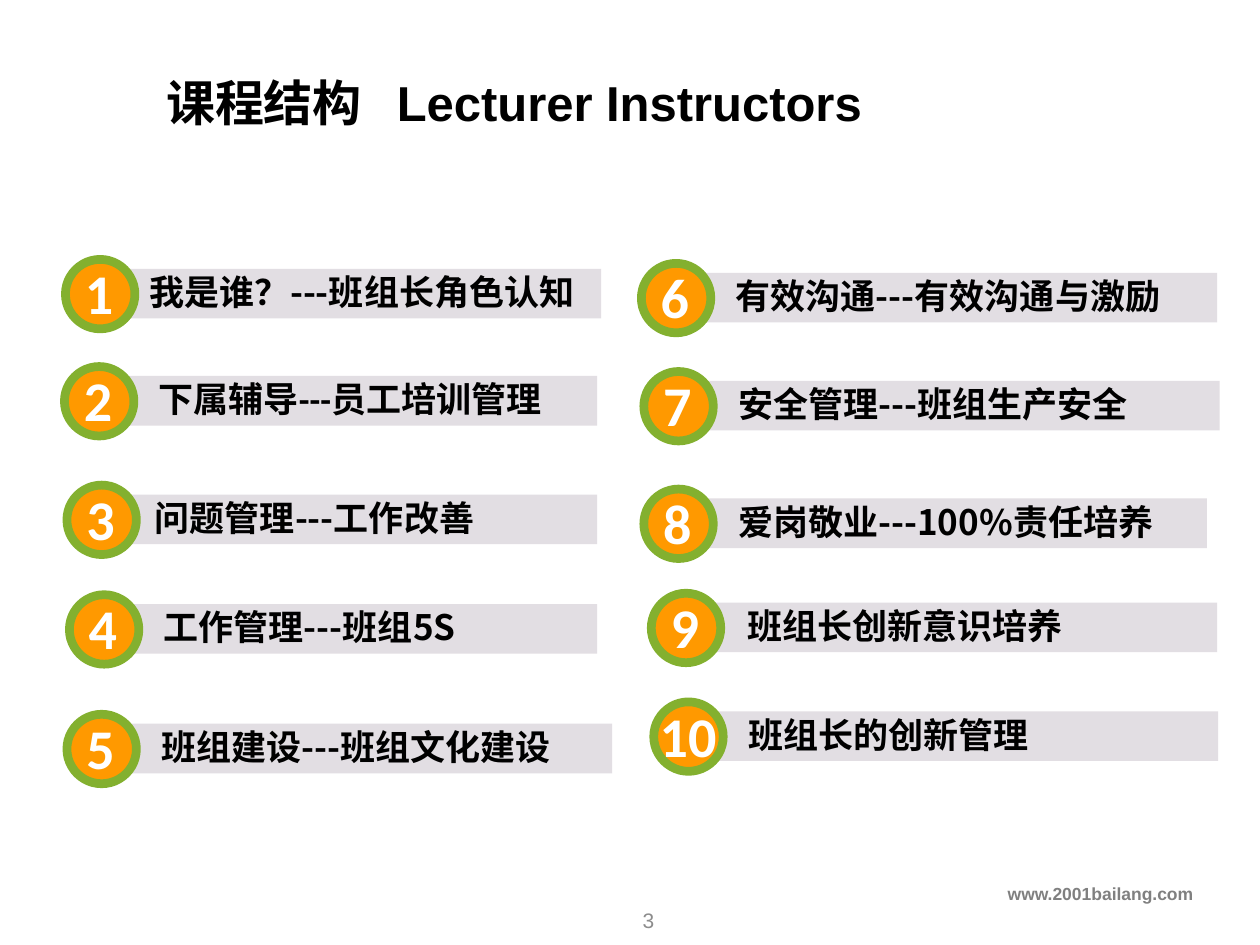
"""Build the course structure slide: ten numbered topics in two columns."""
from dataclasses import dataclass

from lxml import etree
from pptx import Presentation
from pptx.dml.color import RGBColor as Rgb
from pptx.enum import shapes, text
from pptx.oxml import ns
from pptx.util import Cm, Pt


@dataclass(frozen=True)
class Theme:
    black: str = "000000"
    white: str = "FFFFFF"
    grey: str = "808080"
    pale: str = "8C8C8C"
    bar: str = "E2DEE3"
    disc: str = "FF9900"
    ring: str = "83B02F"
    head: int = 28
    digit: int = 32
    topic: int = 20
    page: int = 12
    site: int = 10
    han: str = "Noto Sans CJK SC"
    latin: str = "Arial"
    round: str = "Calibri"


look = Theme()
deck = Presentation()
deck.slide_width, deck.slide_height = Cm(25.4), Cm(19.05)
slide = deck.slides.add_slide(deck.slide_layouts[6])


def write(words, area, size, color, face, bold=True, align=text.PP_ALIGN.LEFT,
          anchor=text.MSO_ANCHOR.TOP):
    frame = slide.shapes.add_textbox(*map(Cm, area)).text_frame
    frame.word_wrap = True
    frame.vertical_anchor = anchor
    frame.text = words
    line = frame.paragraphs[0]
    line.alignment = align
    for run in line.runs:
        font = run.font
        font.size, font.bold, font.name = Pt(size), bold, face
        font.color.rgb = Rgb.from_string(color)
        east = etree.SubElement(run._r.get_or_add_rPr(), ns.qn("a:ea"))
        east.set("typeface", look.han)
    return line


def draw(kind, area, color):
    shape = slide.shapes.add_shape(kind, *map(Cm, area))
    shape.shadow.inherit = False
    shape.fill.solid()
    shape.fill.fore_color.rgb = Rgb.from_string(color)
    shape.line.fill.background()
    return shape


title = write("课程结构\t", (3.1, 1.27, 17.2, 1.57), look.head, look.black,
              look.han, anchor=text.MSO_ANCHOR.MIDDLE)
stops = etree.SubElement(title._p.get_or_add_pPr(), ns.qn("a:tabLst"))
etree.SubElement(stops, ns.qn("a:tab"), pos=str(Cm(4.65)), algn="l")
name = title.add_run()
name.text = "Lecturer Instructors"
name.font.size, name.font.bold, name.font.name = Pt(look.head), True, look.latin
name.font.color.rgb = Rgb.from_string(look.black)

topics = [
    (1.32, 5.23, 12.12, 2.77, "我是谁？---班组长角色认知"),
    (1.3, 7.39, 12.04, 2.95, "下属辅导---员工培训管理"),
    (1.35, 9.78, 12.04, 2.87, "问题管理---工作改善"),
    (1.4, 11.99, 12.04, 3.05, "工作管理---班组5S"),
    (1.35, 14.4, 12.34, 3, "班组建设---班组文化建设"),
    (12.93, 5.31, 24.54, 14.58, "有效沟通---有效沟通与激励"),
    (12.98, 7.49, 24.59, 14.63, "安全管理---班组生产安全"),
    (12.98, 9.86, 24.33, 14.63, "爱岗敬业---100%责任培养"),
    (13.13, 11.96, 24.54, 14.81, "班组长创新意识培养"),
    (13.18, 14.15, 24.56, 14.83, "班组长的创新管理"),
]
for count, (left, top, right, start, words) in enumerate(topics, 1):
    edge = left + 0.2
    draw(shapes.MSO_SHAPE.RECTANGLE, (edge, top + 0.19, right - edge, 1), look.bar)
    disc = draw(shapes.MSO_SHAPE.OVAL, (left, top, 1.4, 1.4), look.disc)
    disc.line.color.rgb = Rgb.from_string(look.ring)
    disc.line.width = Pt(5)
    shift, wide = (0.14, 0.86) if count < 10 else (-0.13, 2.08)
    write(str(count), (left + shift, top - 0.14, wide, 1.62),
          look.digit, look.white, look.round)
    face = look.round if count == 2 else look.han
    write(words, (start, top + 0.1, 9.8, 1.11), look.topic, look.black, face)

write("www.2001bailang.com", (0, 17.68, 24.3, 0.89), look.site, look.grey,
      look.latin, align=text.PP_ALIGN.RIGHT)
write("3", (10.21, 18.03, 5.72, 1.02), look.page, look.pale, look.latin, False,
      text.PP_ALIGN.CENTER, text.MSO_ANCHOR.MIDDLE)

deck.save("out.pptx")
